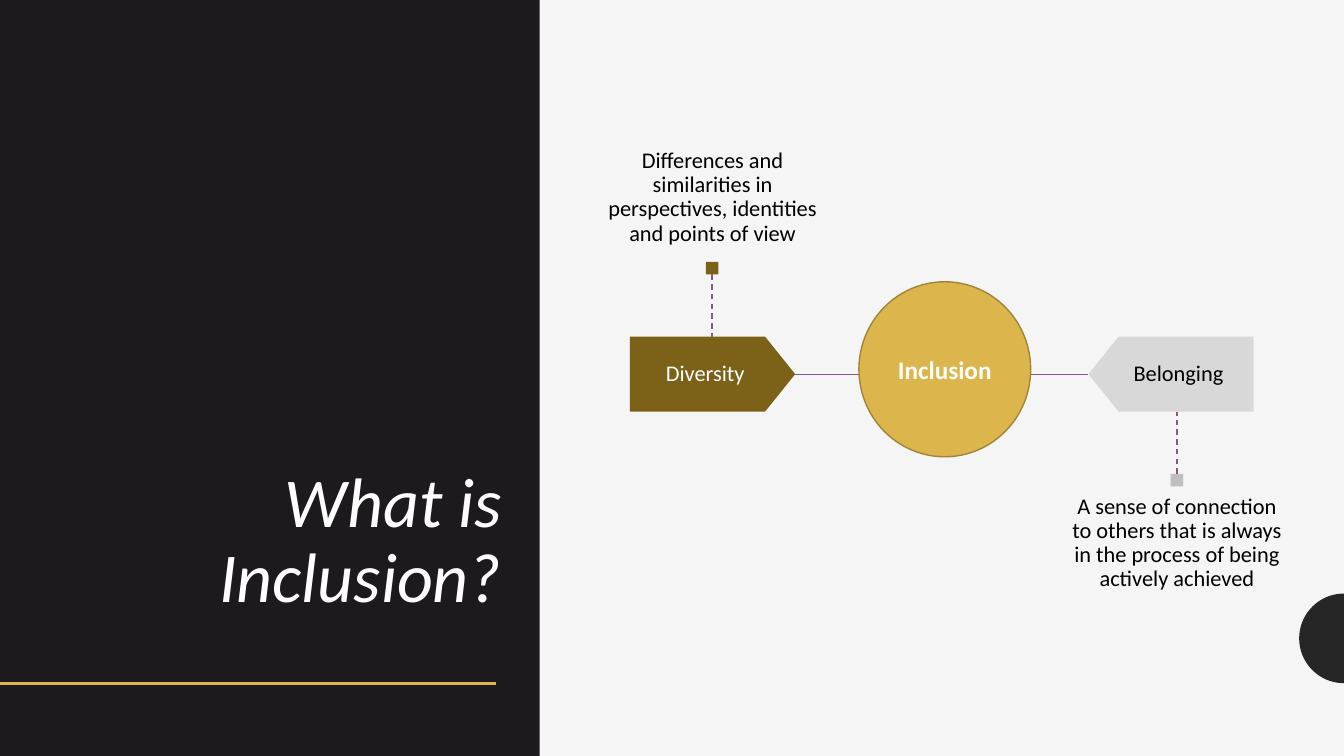
"""Build the "What is Inclusion?" slide."""
import math

from lxml import etree
from pptx import Presentation
from pptx.dml.color import RGBColor
from pptx.enum.dml import MSO_LINE
from pptx.enum.shapes import MSO_CONNECTOR, MSO_SHAPE
from pptx.enum.text import MSO_ANCHOR, PP_ALIGN
from pptx.oxml.ns import qn
from pptx.util import Pt

DASH = MSO_LINE.DASH
STRAIGHT = MSO_CONNECTOR.STRAIGHT
RECTANGLE, OVAL = MSO_SHAPE.RECTANGLE, MSO_SHAPE.OVAL
TOP, MIDDLE, BOTTOM = MSO_ANCHOR.TOP, MSO_ANCHOR.MIDDLE, MSO_ANCHOR.BOTTOM
CENTER, RIGHT = PP_ALIGN.CENTER, PP_ALIGN.RIGHT

WIDTH, HEIGHT = 960, 540
WHITE, BLACK, PAPER = "FFFFFF", "000000", "F5F5F5"
PANEL, CHARCOAL = "1D1A1D", "262626"
GOLD, DARK_GOLD, BRONZE = "DCB64D", "A08438", "7C6118"
PLUM, SILVER, GREY = "835B81", "D8D8D8", "BFBFBF"

TAG_TOP, TAG_WIDTH, TAG_HEIGHT, TAG_TIP = 240.5, 118, 53.5, 21.5
TAG_BOTTOM, TAG_MIDDLE = TAG_TOP + TAG_HEIGHT, TAG_TOP + TAG_HEIGHT / 2
DIVERSITY_LEFT, BELONGING_LEFT = 450, 777.5
MARKER = 9


def color(hex_code):
    """Return the colour for a hex string."""
    return RGBColor.from_string(hex_code)


def paint(shape, fill, outline=None):
    """Give a shape a solid fill and an optional thin outline."""
    shape.shadow.inherit = False
    shape.fill.solid()
    shape.fill.fore_color.rgb = color(fill)
    if outline:
        shape.line.color.rgb = color(outline)
        shape.line.width = Pt(1)
    else:
        shape.line.fill.background()
    return shape


def add_preset(slide, kind, box, fill, outline=None):
    """Add a preset shape in a box of left, top, width and height."""
    return paint(slide.shapes.add_shape(kind, *map(Pt, box)), fill, outline)


def add_outline(slide, points, fill):
    """Add a closed polygon through the given points."""
    corners = [(Pt(x), Pt(y)) for x, y in points]
    builder = slide.shapes.build_freeform(*corners[0], scale=1.0)
    builder.add_line_segments(corners[1:], close=True)
    return paint(builder.convert_to_shape(), fill)


def add_line(slide, start, end, stroke, width, dash=None):
    """Add a straight line without a shadow."""
    line = slide.shapes.add_connector(STRAIGHT, *map(Pt, (*start, *end)))
    line.line.color.rgb = color(stroke)
    line.line.width = Pt(width)
    if dash:
        line.line.dash_style = dash
    properties = line._element.find(qn("p:spPr"))
    etree.SubElement(properties, qn("a:effectLst"))


def write(shape, text, size=16, ink=BLACK, bold=False, italic=False,
          align=CENTER, anchor=MIDDLE, spacing=0.9, insets=(7.2, 3.6, 7.2, 3.6)):
    """Write one formatted paragraph into a shape."""
    frame = shape.text_frame
    frame.word_wrap = True
    frame.vertical_anchor = anchor
    (frame.margin_left, frame.margin_top,
     frame.margin_right, frame.margin_bottom) = map(Pt, insets)
    paragraph = frame.paragraphs[0]
    paragraph.alignment = align
    paragraph.line_spacing = spacing
    run = paragraph.add_run()
    run.text = text
    run.font.name = "Calibri"
    run.font.size = Pt(size)
    run.font.bold = bold
    run.font.italic = italic
    run.font.color.rgb = color(ink)


def add_text(slide, box, text, **style):
    """Add a text box."""
    write(slide.shapes.add_textbox(*map(Pt, box)), text, **style)


def add_tag(slide, left, text, fill, ink, points_right):
    """Add a label whose tip points right or left."""
    right = left + TAG_WIDTH
    flat, tip, step = (left, right, -TAG_TIP) if points_right else (right, left, TAG_TIP)
    shoulder = tip + step
    tag = add_outline(slide, [(flat, TAG_TOP), (shoulder, TAG_TOP), (tip, TAG_MIDDLE),
                              (shoulder, TAG_BOTTOM), (flat, TAG_BOTTOM)], fill)
    insets = (9.4, 9.4, 20, 9.4) if points_right else (20, 9.4, 9.4, 9.4)
    write(tag, text, ink=ink, insets=insets)


def add_callout(slide, center, tag_edge, marker_top, fill, box, text):
    """Add a dashed stem, its square marker and a description."""
    marker_edge = marker_top + MARKER if marker_top < tag_edge else marker_top
    add_line(slide, (center, marker_edge), (center, tag_edge), PLUM, 1, DASH)
    add_preset(slide, RECTANGLE, (center - MARKER / 2, marker_top, MARKER, MARKER), fill)
    add_text(slide, box, text, anchor=BOTTOM, insets=(0, 11.5, 0, 11.5))


def add_half_disc(slide, center_y, radius, steps=48):
    """Add a half disc against the right edge of the slide."""
    angles = [math.pi * (0.5 + step / steps) for step in range(steps + 1)]
    add_outline(slide, [(WIDTH + radius * math.cos(angle), center_y + radius * math.sin(angle))
                        for angle in angles], CHARCOAL)


def main():
    """Build and save the slide."""
    deck = Presentation()
    deck.slide_width, deck.slide_height = Pt(WIDTH), Pt(HEIGHT)
    slide = deck.slides.add_slide(deck.slide_layouts[6])
    slide.background.fill.solid()
    slide.background.fill.fore_color.rgb = color(PAPER)

    add_half_disc(slide, center_y=456, radius=32)
    add_preset(slide, RECTANGLE, (0, 0, 385.5, HEIGHT), PANEL)
    add_line(slide, (0, 488), (354.3, 488), GOLD, 2)
    add_text(slide, (64, 270, 301.5, 175), "What is Inclusion?", size=50, ink=WHITE,
             italic=True, align=RIGHT, anchor=BOTTOM)

    add_line(slide, (DIVERSITY_LEFT + TAG_WIDTH, TAG_MIDDLE), (613.5, TAG_MIDDLE), PLUM, 0.75)
    add_line(slide, (731.5, TAG_MIDDLE), (BELONGING_LEFT, TAG_MIDDLE), PLUM, 0.75)
    add_tag(slide, DIVERSITY_LEFT, "Diversity", BRONZE, WHITE, points_right=True)
    add_tag(slide, BELONGING_LEFT, "Belonging", SILVER, BLACK, points_right=False)
    add_callout(slide, 508.7, TAG_TOP, 187, BRONZE, (427, 44.6, 164, 142.6),
                "Differences and similarities in perspectives, identities and points of view")
    add_callout(slide, 840.7, TAG_BOTTOM, 338.5, GREY, (764, 350.6, 153.4, 83.5),
                "A sense of connection to others that is always in the process of "
                "being actively achieved")

    hub = add_preset(slide, OVAL, (613.5, 201.3, 122.7, 125), GOLD, DARK_GOLD)
    write(hub, "Inclusion", size=18, ink=WHITE, bold=True, spacing=1.0)
    deck.save("out.pptx")


if __name__ == "__main__":
    main()
